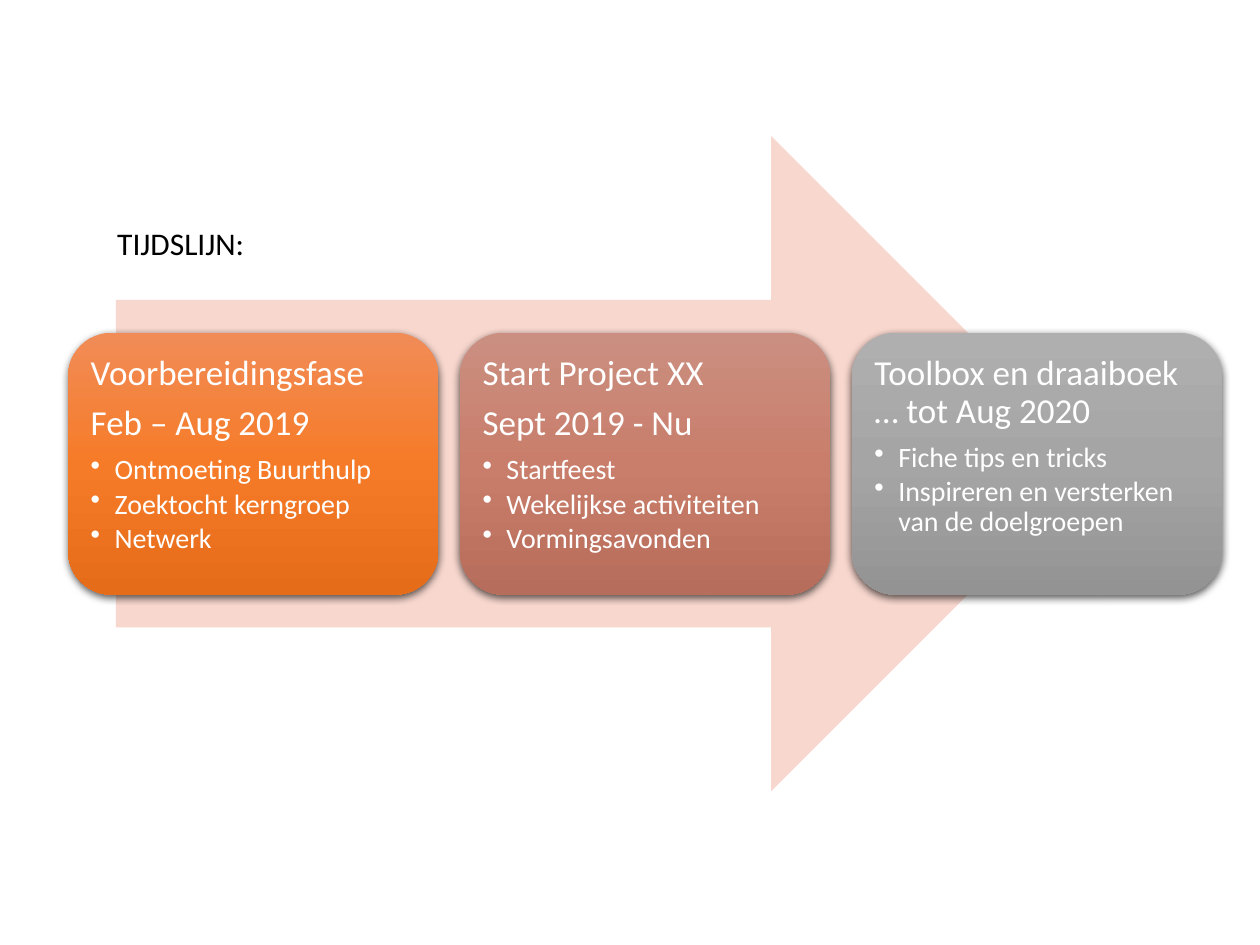
from copy import deepcopy
from dataclasses import dataclass

from lxml import etree
from pptx import Presentation
from pptx import util as u
from pptx.dml.color import RGBColor
from pptx.enum import shapes, text
from pptx.oxml.ns import qn

COLORS = {
    "arrow": "F8D7CE",
    "white": "FFFFFF",
    "black": "000000",
    "orange": ("F18C57", "F67B28", "E56C19"),
    "terracotta": ("CB8F81", "C97E6B", "B76D5B"),
    "gray": ("AFAFAF", "A5A5A5", "939393"),
}
FONT = "Calibri"
CARD_LEFT, CARD_TOP, CARD_PITCH = 0.54, 2.64, 3.11
CARD_WIDTH, CARD_HEIGHT = 2.94, 2.08
TEXT_OFFSET, TEXT_INSET, BULLET_INDENT = 0.1, 0.08, 0.19


@dataclass
class Phase:
    color: str
    headings: list[str]
    activities: list[str]


PHASES = [
    Phase("orange", ["Voorbereidingsfase", "Feb – Aug 2019"],
          ["Ontmoeting Buurthulp", "Zoektocht kerngroep", "Netwerk"]),
    Phase("terracotta", ["Start Project XX", "Sept 2019 - Nu"],
          ["Startfeest", "Wekelijkse activiteiten", "Vormingsavonden"]),
    Phase("gray", ["Toolbox en draaiboek … tot Aug 2020"],
          ["Fiche tips en tricks", "Inspireren en versterken van de doelgroepen"]),
]


def style_text(paragraph, size: int, color: str) -> None:
    for run in paragraph.runs:
        run.font.name = FONT
        run.font.size = u.Pt(size)
        run.font.color.rgb = RGBColor.from_string(COLORS[color])


def fill_gradient(shape, colors: tuple[str, ...]) -> None:
    shape.fill.gradient()
    shape.fill.gradient_angle = 270
    stop_list = shape._element.spPr.find(qn("a:gradFill")).find(qn("a:gsLst"))
    stop_list.append(deepcopy(stop_list[-1]))
    for stop, color, position in zip(shape.fill.gradient_stops, colors, (0, 0.5, 1)):
        stop.color.rgb = RGBColor.from_string(color)
        stop.position = position


def add_shadow(shape) -> None:
    shape.shadow.inherit = False
    effects = shape._element.spPr.find(qn("a:effectLst"))
    shadow = etree.SubElement(effects, qn("a:outerShdw"), blurRad=str(u.Pt(4.5)),
                              dist=str(u.Pt(1.5)), dir="5400000", algn="ctr",
                              rotWithShape="0")
    color = etree.SubElement(shadow, qn("a:srgbClr"), val=COLORS["black"])
    etree.SubElement(color, qn("a:alpha"), val="63000")


def add_bullet(paragraph) -> None:
    paragraph.level = 1
    properties = paragraph._p.get_or_add_pPr()
    properties.set("marL", str(u.Inches(BULLET_INDENT)))
    properties.set("indent", str(-u.Inches(BULLET_INDENT)))
    etree.SubElement(properties, qn("a:buChar"), char="•")


def add_phase(slide, phase: Phase, left: float) -> None:
    card = slide.shapes.add_shape(
        shapes.MSO_SHAPE.ROUNDED_RECTANGLE, u.Inches(left), u.Inches(CARD_TOP),
        u.Inches(CARD_WIDTH), u.Inches(CARD_HEIGHT))
    fill_gradient(card, COLORS[phase.color])
    card.line.fill.background()
    add_shadow(card)

    label = slide.shapes.add_textbox(
        u.Inches(left + TEXT_OFFSET), u.Inches(CARD_TOP + TEXT_OFFSET),
        u.Inches(CARD_WIDTH - 2 * TEXT_OFFSET), u.Inches(CARD_HEIGHT - 2 * TEXT_OFFSET))
    frame = label.text_frame
    frame.word_wrap = True
    frame.margin_left = frame.margin_right = u.Inches(TEXT_INSET)
    frame.margin_top = frame.margin_bottom = u.Inches(TEXT_INSET)
    frame.text = "\n".join(phase.headings + phase.activities)
    for index, paragraph in enumerate(frame.paragraphs):
        is_heading = index < len(phase.headings)
        paragraph.line_spacing = 0.9
        paragraph.space_after = u.Pt(7 if is_heading else 2.4)
        if not is_heading:
            add_bullet(paragraph)
        style_text(paragraph, 20 if is_heading else 16, "white")


def add_title(slide, wording: str) -> None:
    title = slide.shapes.title
    title.left, title.top = u.Inches(0.83), u.Inches(1.73)
    title.width, title.height = u.Inches(3.78), u.Inches(0.4)
    frame = title.text_frame
    frame.text = wording
    frame.auto_size = text.MSO_AUTO_SIZE.NONE
    frame.vertical_anchor = text.MSO_ANCHOR.MIDDLE
    frame.paragraphs[0].alignment = text.PP_ALIGN.LEFT
    style_text(frame.paragraphs[0], 18, "black")


def add_arrow(slide) -> None:
    arrow = slide.shapes.add_shape(
        shapes.MSO_SHAPE.RIGHT_ARROW, u.Inches(0.92), u.Inches(1.08),
        u.Inches(7.8), u.Inches(5.2))
    arrow.fill.solid()
    arrow.fill.fore_color.rgb = RGBColor.from_string(COLORS["arrow"])
    arrow.line.fill.background()
    arrow.shadow.inherit = False


def main() -> None:
    presentation = Presentation()
    presentation.slide_width = u.Inches(10)
    presentation.slide_height = u.Inches(7.5)
    slide = presentation.slides.add_slide(presentation.slide_layouts[5])
    add_title(slide, "TIJDSLIJN:")
    add_arrow(slide)
    for index, phase in enumerate(PHASES):
        add_phase(slide, phase, CARD_LEFT + index * CARD_PITCH)
    presentation.save("out.pptx")


if __name__ == "__main__":
    main()
